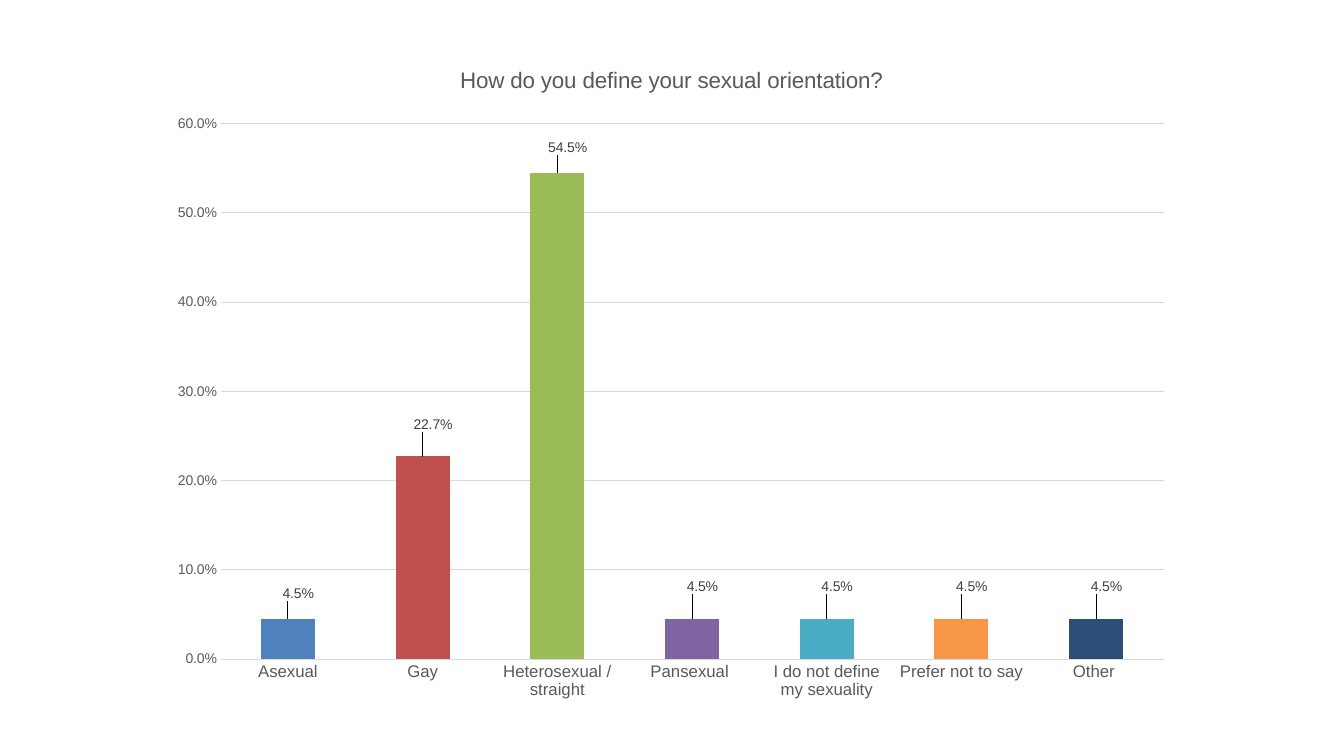
import pptx
import pptx.chart.data
import pptx.dml.color
import pptx.enum.chart
import pptx.oxml
import pptx.oxml.ns
import pptx.util
from pptx.util import Cm

GREY = pptx.dml.color.RGBColor(0x59, 0x59, 0x59)
DARK = pptx.dml.color.RGBColor(0x40, 0x40, 0x40)
GRID = pptx.dml.color.RGBColor(0xD9, 0xD9, 0xD9)
BLUE = pptx.dml.color.RGBColor(0x4F, 0x81, 0xBD)
RED = pptx.dml.color.RGBColor(0xC0, 0x50, 0x4D)
GREEN = pptx.dml.color.RGBColor(0x9B, 0xBB, 0x59)
PURPLE = pptx.dml.color.RGBColor(0x80, 0x64, 0xA2)
TEAL = pptx.dml.color.RGBColor(0x4B, 0xAC, 0xC6)
ORANGE = pptx.dml.color.RGBColor(0xF7, 0x96, 0x46)
NAVY = pptx.dml.color.RGBColor(0x2C, 0x4D, 0x75)

# Answer, share, bar colour, label shift as fractions of the chart
ROWS = [
    ("Asexual", 0.045, BLUE, (0.01, -0.02)),
    ("Gay", 0.227, RED, (0.01, -0.03)),
    ("Heterosexual / straight", 0.545, GREEN, (0.01, -0.02)),
    ("Pansexual ", 0.045, PURPLE, (0.01, -0.03)),
    ("I do not define my sexuality", 0.045, TEAL, (0.01, -0.03)),
    ("Prefer not to say", 0.045, ORANGE, (0.01, -0.03)),
    ("Other ", 0.045, NAVY, (0.01, -0.03)),
]


def style(font, size, color):
    font.name = "Arial"
    font.size = pptx.util.Pt(size)
    font.bold = False
    font.color.rgb = color


def layout(inner="", **parts):
    """Return a manual chart layout element."""
    target = '<c:layoutTarget val="inner"/>' if inner else ""
    modes = '<c:xMode val="edge"/><c:yMode val="edge"/>' if inner else ""
    sizes = "".join(f'<c:{key} val="{val}"/>' for key, val in parts.items())
    return pptx.oxml.parse_xml(
        f'<c:layout {pptx.oxml.ns.nsdecls("c")}><c:manualLayout>'
        f"{target}{modes}{sizes}</c:manualLayout></c:layout>")


def set_axes(chart):
    for axis, size in ((chart.category_axis, 12), (chart.value_axis, 10)):
        axis.major_tick_mark = pptx.enum.chart.XL_TICK_MARK.NONE
        axis.minor_tick_mark = pptx.enum.chart.XL_TICK_MARK.NONE
        axis.format.line.fill.background()
        style(axis.tick_labels.font, size, GREY)
    scale = chart.value_axis
    scale.minimum_scale, scale.maximum_scale, scale.major_unit = 0, 0.6, 0.1
    scale.tick_labels.number_format = "0.0%"
    scale.tick_labels.number_format_is_linked = False
    line = scale.major_gridlines.format.line
    line.color.rgb = GRID
    line.width = pptx.util.Pt(0.75)


def set_bars(chart):
    plot = chart.plots[0]
    plot.gap_width = 150
    plot.vary_by_categories = False
    bars = plot.series[0]
    outside = pptx.enum.chart.XL_LABEL_POSITION.OUTSIDE_END
    labels = bars.data_labels
    labels.show_value = True
    labels.number_format = "0.0%"
    labels.number_format_is_linked = False
    labels.position = outside
    style(labels.font, 10, DARK)
    for i, (_, _, color, _) in enumerate(ROWS):
        point = bars.points[i]
        point.format.fill.solid()
        point.format.fill.fore_color.rgb = color
        style(point.data_label.font, 10, DARK)
        point.data_label.position = outside
    for idx, row in zip(chart.element.xpath(".//c:dLbl/c:idx"), ROWS):
        x, y = row[3]
        idx.addnext(layout(x=x, y=y))


def add_survey(slide, left, top, width, height):
    data = pptx.chart.data.CategoryChartData(number_format="0.0%")
    data.categories = [row[0] for row in ROWS]
    data.add_series("Series 1", [row[1] for row in ROWS])
    kind = pptx.enum.chart.XL_CHART_TYPE.COLUMN_CLUSTERED
    chart = slide.shapes.add_chart(kind, left, top, width, height, data).chart
    chart.has_legend = False
    chart.font.name = "Calibri"
    chart.font.size = pptx.util.Pt(10)
    chart.has_title = True
    frame = chart.chart_title.text_frame
    frame.text = "How do you define your sexual orientation?"
    style(frame.paragraphs[0].runs[0].font, 16, GREY)
    chart.chart_title.include_in_layout = False
    set_axes(chart)
    set_bars(chart)
    area = chart.element.xpath(".//c:plotArea")[0]
    for old in area.xpath("./c:layout"):
        area.remove(old)
    area.insert(0, layout("inner", x=0.06, y=0.12, w=0.92, h=0.8))


def main():
    deck = pptx.Presentation()
    deck.slide_width, deck.slide_height = Cm(33.87), Cm(19.05)
    slide = deck.slides.add_slide(deck.slide_layouts[6])
    add_survey(slide, Cm(4.01), Cm(1.09), Cm(25.83), Cm(16.87))
    deck.save("out.pptx")


if __name__ == "__main__":
    main()
